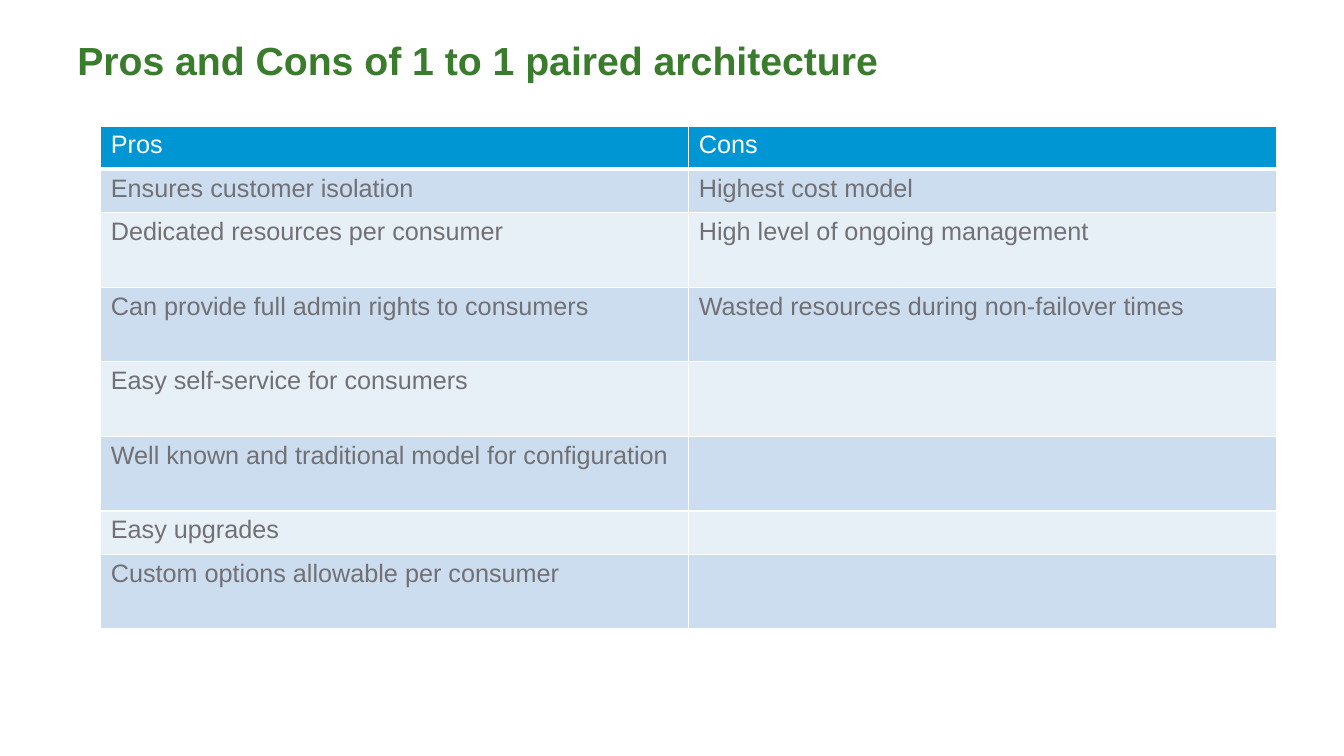
from lxml import etree
from pptx import Presentation
from pptx import util as u
from pptx.dml.color import RGBColor
from pptx.enum import text
from pptx.oxml.ns import qn

WIDTH, HEIGHT = 13.33, 7.5
COLORS = {
    "title": "387C2C",
    "header": "0095D3",
    "band_dark": "CCDDEF",
    "band_light": "E7EFF7",
    "body": "717074",
    "white": "FFFFFF",
}
HEADINGS = ("Pros", "Cons")
SHORT_ROW, TALL_ROW = 0.43, 0.74
ROWS = [
    (SHORT_ROW, "Ensures customer isolation", "Highest cost model"),
    (TALL_ROW, "Dedicated resources per consumer", "High level of ongoing management"),
    (TALL_ROW, "Can provide full admin rights to consumers",
     "Wasted resources during non-failover times"),
    (TALL_ROW, "Easy self-service for consumers", ""),
    (TALL_ROW, "Well known and traditional model for configuration", ""),
    (SHORT_ROW, "Easy upgrades", ""),
    (TALL_ROW, "Custom options allowable per consumer", ""),
]


def color(name):
    return RGBColor.from_string(COLORS[name])


def format_font(font, color_name, **values):
    font.color.rgb = color(color_name)
    for name, value in {"name": "Arial", **values}.items():
        setattr(font, name, value)


def add_title(page, words):
    title = page.shapes.title
    box = {"left": 0.05 * WIDTH, "top": 0.36, "width": 0.9 * WIDTH, "height": 0.89}
    for name, inches in box.items():
        setattr(title, name, u.Inches(inches))
    frame = title.text_frame
    frame.text = words
    frame.word_wrap = True
    frame.auto_size = text.MSO_AUTO_SIZE.NONE
    frame.vertical_anchor = text.MSO_ANCHOR.TOP
    para = frame.paragraphs[0]
    para.alignment = text.PP_ALIGN.LEFT
    para.line_spacing = 0.9
    format_font(para.runs[0].font, "title", size=u.Pt(28), bold=True)


def add_borders(cell, bottom):
    """Draw white borders of 1 pt, with the bottom one of the given points."""
    properties = cell._tc.get_or_add_tcPr()
    for side, points in {"L": 1, "R": 1, "T": 1, "B": bottom}.items():
        line = etree.SubElement(properties, qn(f"a:ln{side}"), w=str(u.Pt(points)))
        fill = etree.SubElement(line, qn("a:solidFill"))
        etree.SubElement(fill, qn("a:srgbClr"), val=COLORS["white"])


def fill_cell(cell, words, fill_name, font_color, bottom=1):
    add_borders(cell, bottom)
    cell.fill.solid()
    cell.fill.fore_color.rgb = color(fill_name)
    cell.text = words
    format_font(cell.text_frame.paragraphs[0].font, font_color,
                size=u.Pt(18), bold=False)
    for span in cell.text_frame.paragraphs[0].runs:
        format_font(span.font, font_color, size=u.Pt(18), bold=False)


def add_comparison(page):
    heights = [SHORT_ROW] + [row[0] for row in ROWS]
    frame = page.shapes.add_table(
        len(heights), len(HEADINGS), u.Inches(1), u.Inches(HEIGHT / 6),
        u.Inches(0.875 * WIDTH), u.Inches(sum(heights)))
    table = frame.table
    for row, height in zip(table.rows, heights):
        row.height = u.Inches(height)
    for column, heading in enumerate(HEADINGS):
        fill_cell(table.cell(0, column), heading, "header", "white", bottom=3)
    for index, (_, *entries) in enumerate(ROWS, start=1):
        band = "band_dark" if index % 2 else "band_light"
        for column, entry in enumerate(entries):
            fill_cell(table.cell(index, column), entry, band, "body")


def main():
    deck = Presentation()
    deck.slide_width, deck.slide_height = u.Inches(WIDTH), u.Inches(HEIGHT)
    page = deck.slides.add_slide(deck.slide_layouts[5])
    add_title(page, "Pros and Cons of 1 to 1 paired architecture")
    add_comparison(page)
    deck.save("out.pptx")


if __name__ == "__main__":
    main()
